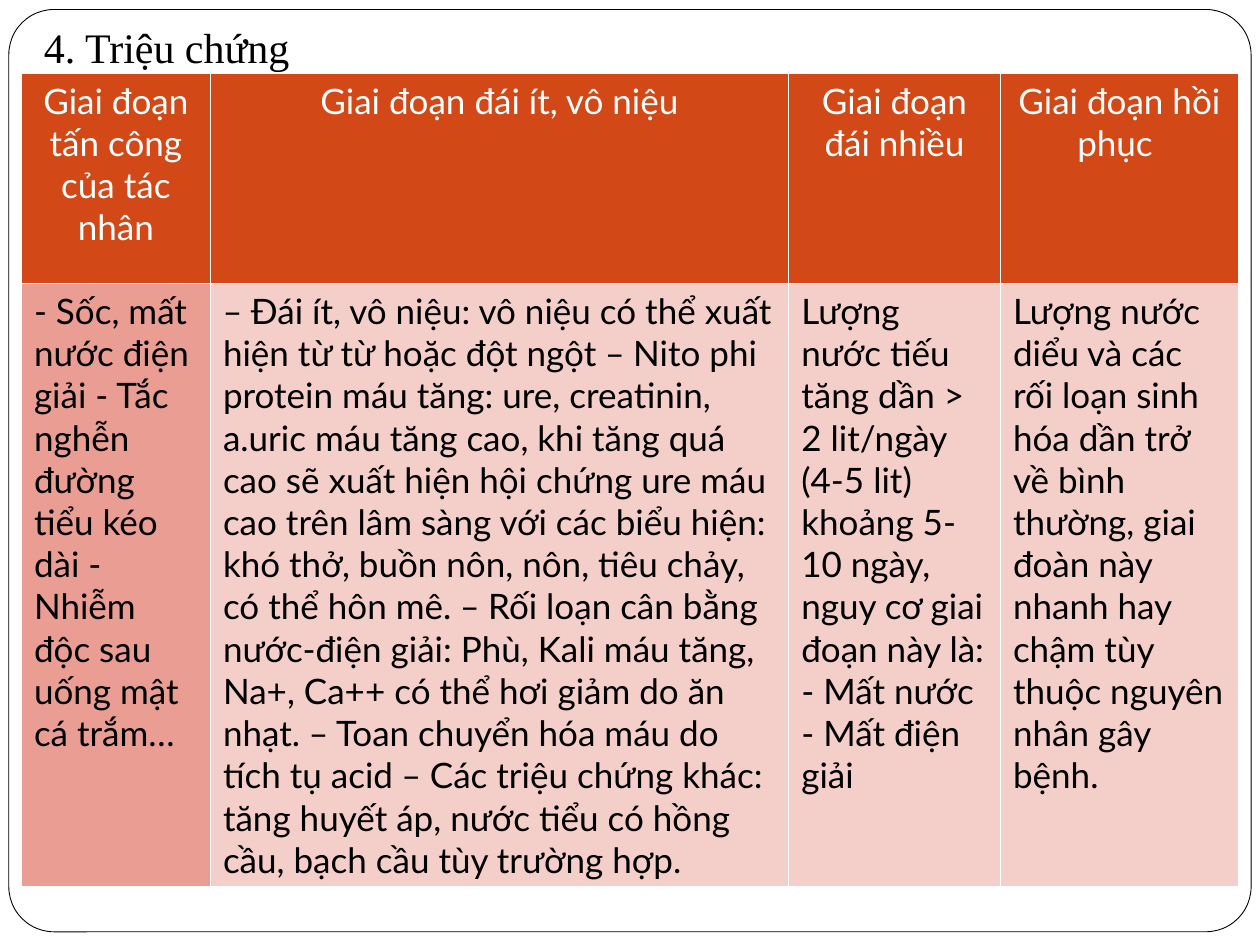
import dataclasses

import pptx
import pptx.dml.color
import pptx.enum.shapes
import pptx.enum.text
import pptx.oxml
import pptx.oxml.ns
import pptx.util

Inches, Pt = pptx.util.Inches, pptx.util.Pt


@dataclasses.dataclass(frozen=True)
class Theme:
    paper: str = "FFFFFF"
    ink: str = "000000"
    header: str = "D34817"
    first_column: str = "E99D93"
    body: str = "F4CEC9"
    title_font: str = "Times New Roman"
    table_font: str = "Lato"
    title_size: float = 24
    table_size: float = 20
    frame_line: float = 0.5
    cell_line: float = 1


THEME = Theme()
WIDTH, HEIGHT = 10, 7.5
COLUMNS = (1.5, 4.59, 1.68, 1.89)
ROWS = (1.67, 4.67)
STAGES = (
    ("Giai đoạn tấn công của tác nhân",
     "- Sốc, mất nước điện giải - Tắc nghễn đường tiểu kéo dài - Nhiễm độc sau "
     "uống mật cá trắm…"),
    ("Giai đoạn đái ít, vô niệu",
     "‒ Đái ít, vô niệu: vô niệu có thể xuất hiện từ từ hoặc đột ngột ‒ Nito phi "
     "protein máu tăng: ure, creatinin, a.uric máu tăng cao, khi tăng quá cao sẽ "
     "xuất hiện hội chứng ure máu cao trên lâm sàng với các biểu hiện: khó thở, "
     "buồn nôn, nôn, tiêu chảy, có thể hôn mê. ‒ Rối loạn cân bằng nước-điện giải: "
     "Phù, Kali máu tăng, Na+, Ca++ có thể hơi giảm do ăn nhạt. ‒ Toan chuyển hóa "
     "máu do tích tụ acid ‒ Các triệu chứng khác: tăng huyết áp, nước tiểu có hồng "
     "cầu, bạch cầu tùy trường hợp."),
    ("Giai đoạn đái nhiều",
     "Lượng nước tiếu tăng dần > 2 lit/ngày (4-5 lit) khoảng 5-10 ngày, nguy cơ "
     "giai đoạn này là: - Mất nước - Mất điện giải"),
    ("Giai đoạn hồi phục ",
     "Lượng nước diểu và các rối loạn sinh hóa dần trở về bình thường, giai đoàn "
     "này nhanh hay chậm tùy thuộc nguyên nhân gây bệnh."),
)


def rgb(color):
    return pptx.dml.color.RGBColor.from_string(color)


def add_run(p, text, font, size, color):
    r = p.add_run()
    r.text = text
    r.font.name = font
    r.font.size = Pt(size)
    r.font.color.rgb = rgb(color)


def add_frame(s):
    """Draw the rounded outline around the whole slide."""
    left, top = 0.007 * WIDTH, 0.01 * HEIGHT
    sp = s.shapes.add_shape(
        pptx.enum.shapes.MSO_SHAPE.ROUNDED_RECTANGLE, Inches(left), Inches(top),
        Inches(WIDTH - 2 * left), Inches(7.32))
    sp.adjustments[0] = 0.049
    sp.shadow.inherit = False
    sp.fill.solid()
    sp.fill.fore_color.rgb = rgb(THEME.paper)
    sp.line.color.rgb = rgb(THEME.ink)
    sp.line.width = Pt(THEME.frame_line)


def set_borders(cell):
    tc_pr = cell._tc.get_or_add_tcPr()
    for i, side in enumerate(("lnL", "lnR", "lnT", "lnB")):
        tc_pr.insert(i, pptx.oxml.parse_xml(
            f'<a:{side} {pptx.oxml.ns.nsdecls("a")} w="{Pt(THEME.cell_line)}">'
            f'<a:solidFill><a:srgbClr val="{THEME.paper}"/></a:solidFill></a:{side}>'))


def fill_cell(cell, text, fill, color, align):
    cell.fill.solid()
    cell.fill.fore_color.rgb = rgb(fill)
    set_borders(cell)
    p = cell.text_frame.paragraphs[0]
    p.alignment = align
    add_run(p, text, THEME.table_font, THEME.table_size, color)


def add_stage_table(s):
    table = s.shapes.add_table(
        len(ROWS), len(COLUMNS), Inches(0.17), Inches(0.58),
        Inches(sum(COLUMNS)), Inches(sum(ROWS))).table
    for row, height in zip(table.rows, ROWS):
        row.height = Inches(height)
    align = pptx.enum.text.PP_ALIGN
    for i, (width, (stage, symptoms)) in enumerate(zip(COLUMNS, STAGES)):
        table.columns[i].width = Inches(width)
        fill_cell(table.cell(0, i), stage, THEME.header, THEME.paper, align.CENTER)
        fill_cell(table.cell(1, i), symptoms,
                  THEME.body if i else THEME.first_column, THEME.ink, align.LEFT)


def add_title(s, text):
    sp = s.shapes.add_textbox(Inches(0.25), Inches(0.17), Inches(9.58), Inches(7.33))
    tf = sp.text_frame
    tf.word_wrap = True
    tf.margin_top = 0
    p = tf.paragraphs[0]
    p.space_before = Pt(5.8)
    add_run(p, text, THEME.title_font, THEME.title_size, THEME.ink)


def main():
    prs = pptx.Presentation()
    prs.slide_width, prs.slide_height = Inches(WIDTH), Inches(HEIGHT)
    s = prs.slides.add_slide(prs.slide_layouts[6])
    add_frame(s)
    add_stage_table(s)
    add_title(s, "4. Triệu chứng")
    prs.save("out.pptx")


if __name__ == "__main__":
    main()
